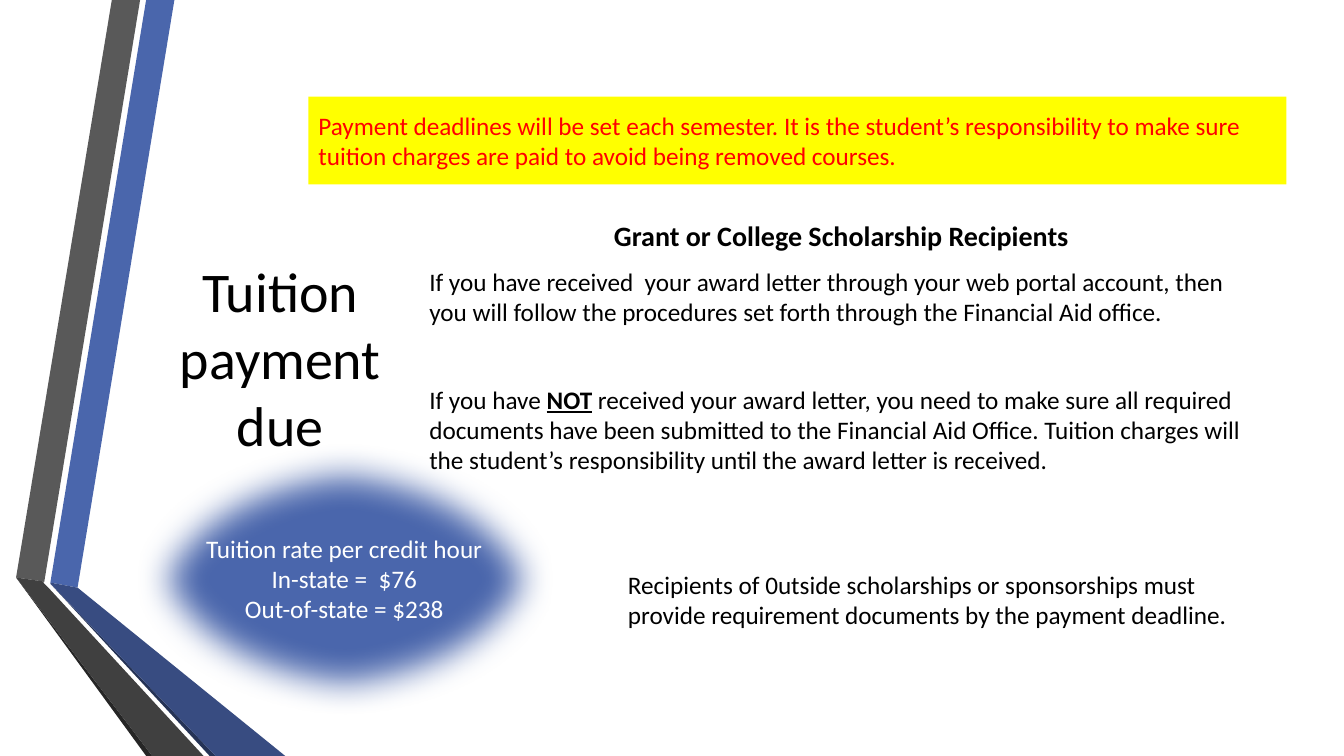
"""Build the slide on tuition payment deadlines."""
from lxml import etree
from pptx import Presentation
from pptx import util as u
from pptx.dml.color import RGBColor
from pptx.enum import shapes, text
from pptx.oxml import ns

PX = 9144
BLACK = RGBColor(0x00, 0x00, 0x00)
WHITE = RGBColor(0xFF, 0xFF, 0xFF)
RED = RGBColor(0xFF, 0x00, 0x00)
YELLOW = RGBColor(0xFF, 0xFF, 0x00)
BLUE = RGBColor(0x4A, 0x66, 0xAC)
OUTLINE_BLUE = RGBColor(0x37, 0x4B, 0x7F)
FOLD_BLUE = RGBColor(0x38, 0x4C, 0x81)
DEEP_BLUE = RGBColor(0x25, 0x33, 0x56)
GRAY = RGBColor(0x59, 0x59, 0x59)
FOLD_GRAY = RGBColor(0x40, 0x40, 0x40)
DEEP_GRAY = RGBColor(0x26, 0x26, 0x26)

RIBBONS = (
    (BLUE, [(50, 578), (77, 583), (173, 0), (145, 0)]),
    (GRAY, [(139, 0), (111, 0), (16, 573), (44, 577)]),
    (DEEP_GRAY, [(16, 573), (145, 750), (151, 750)]),
    (DEEP_BLUE, [(50, 579), (208, 750), (214, 750)]),
    (FOLD_BLUE, [(50, 579), (214, 750), (283, 750), (77, 583), (50, 578)]),
    (FOLD_GRAY, [(202, 750), (48, 583), (43, 578), (44, 577), (16, 573), (151, 750)]),
)


def add_ribbon(slide, color, points):
    """Draw one flat polygon of the ribbon border."""
    builder = slide.shapes.build_freeform(*points[0], scale=PX)
    builder.add_line_segments(points[1:], close=True)
    ribbon = builder.convert_to_shape()
    ribbon.shadow.inherit = False
    ribbon.fill.solid()
    ribbon.fill.fore_color.rgb = color
    ribbon.line.fill.background()


def add_panel(slide, box, kind, fill, line=None):
    """Add a filled preset shape, outlined when a line colour is given."""
    panel = slide.shapes.add_shape(kind, *(n * PX for n in box))
    panel.shadow.inherit = False
    panel.fill.solid()
    panel.fill.fore_color.rgb = fill
    if line is None:
        panel.line.fill.background()
    else:
        panel.line.color.rgb = line
        panel.line.width = u.Pt(1.25)
    return panel


def soften_edge(panel, radius):
    """Fade the border of a shape over a radius in px."""
    effects = panel._element.spPr.find(ns.qn("a:effectLst"))
    etree.SubElement(effects, ns.qn("a:softEdge"), rad=str(radius * PX))


def add_text_area(slide, box):
    """Add an empty text box."""
    return slide.shapes.add_textbox(*(n * PX for n in box))


def write(holder, wording, size=18, color=BLACK, bold=False, underlined=(),
          align=text.PP_ALIGN.LEFT, before=4, after=6):
    """Write a paragraph, with bold underline on the given words."""
    frame = holder.text_frame
    frame.word_wrap = True
    frame.vertical_anchor = text.MSO_ANCHOR.MIDDLE
    first = frame.paragraphs[0]
    paragraph = frame.add_paragraph() if first.runs else first
    paragraph.alignment = align
    paragraph.space_before = u.Pt(before)
    paragraph.space_after = u.Pt(after)
    for part in [wording] if isinstance(wording, str) else wording:
        run = paragraph.add_run()
        run.text = part
        run.font.name = "Calibri"
        run.font.size = u.Pt(size)
        run.font.color.rgb = color
        run.font.bold = bold or part in underlined
        run.font.underline = part in underlined


def main():
    """Build and save the slide."""
    deck = Presentation()
    deck.slide_width, deck.slide_height = 1333 * PX, 750 * PX
    slide = deck.slides.add_slide(deck.slide_layouts[6])
    center = text.PP_ALIGN.CENTER

    for color, points in RIBBONS:
        add_ribbon(slide, color, points)

    title = add_text_area(slide, (162, 75, 232, 558))
    write(title, "Tuition payment due", size=40, align=center, before=0, after=0)

    aid = add_text_area(slide, (416, 173, 837, 342))
    write(aid, "Grant or College Scholarship Recipients", size=20, bold=True, align=center)
    write(aid, "If you have received  your award letter through your web portal account, "
               "then you will follow the procedures set forth through the Financial Aid office.")
    write(aid, ("If you have ", "NOT",
                " received your award letter, you need to make sure all required documents "
                "have been submitted to the Financial Aid Office. Tuition charges will the "
                "student’s responsibility until the award letter is received."),
          underlined=("NOT",), before=35)

    deadline = add_panel(slide, (306, 96, 970, 87), shapes.MSO_SHAPE.RECTANGLE, YELLOW)
    write(deadline, "Payment deadlines will be set each semester. It is the student’s "
                    "responsibility to make sure tuition charges are paid to avoid being "
                    "removed courses.", color=RED)

    sponsors = add_text_area(slide, (613, 514, 641, 162))
    write(sponsors, "Recipients of 0utside scholarships or sponsorships must provide "
                    "requirement documents by the payment deadline.")

    rates = add_panel(slide, (126, 437, 431, 274), shapes.MSO_SHAPE.OVAL, BLUE, OUTLINE_BLUE)
    soften_edge(rates, 35)
    for rate in ("Tuition rate per credit hour", "In-state =  $76", "Out-of-state = $238"):
        write(rates, rate, color=WHITE, align=center, before=0, after=0)

    deck.save("out.pptx")


if __name__ == "__main__":
    main()
